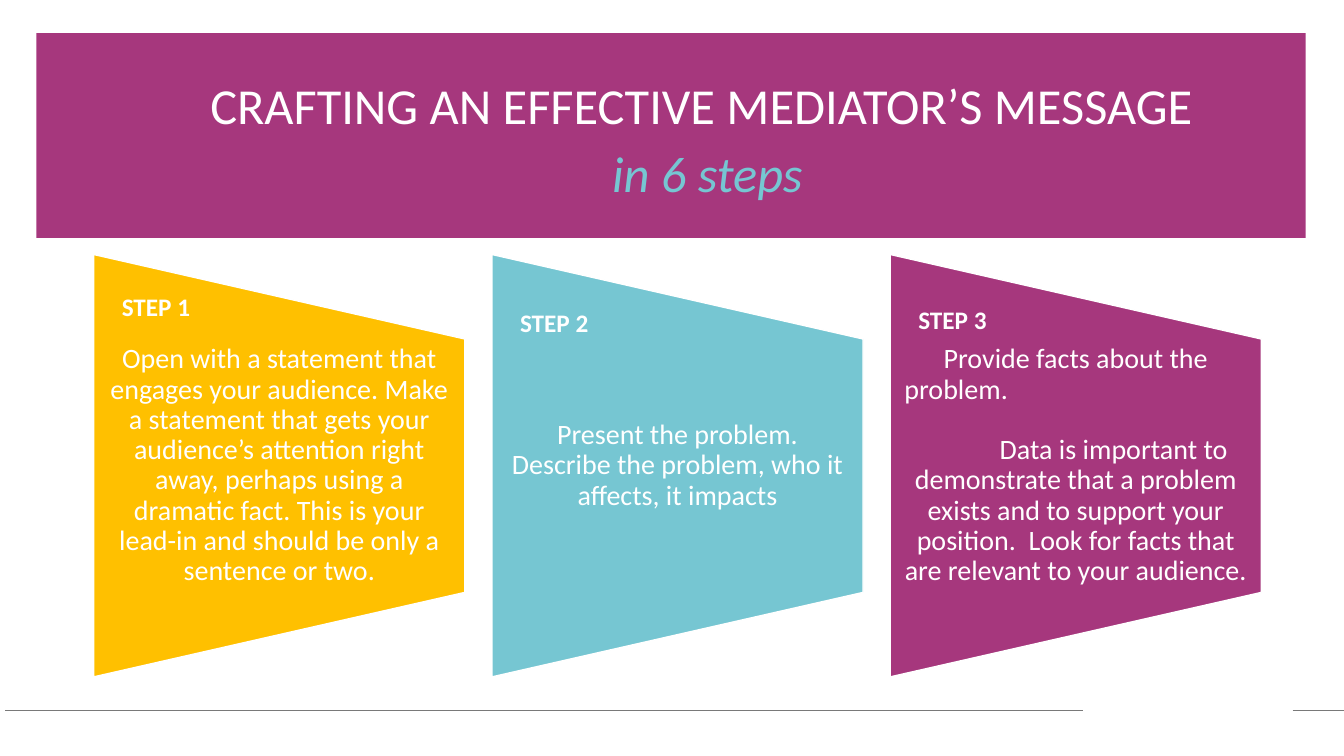
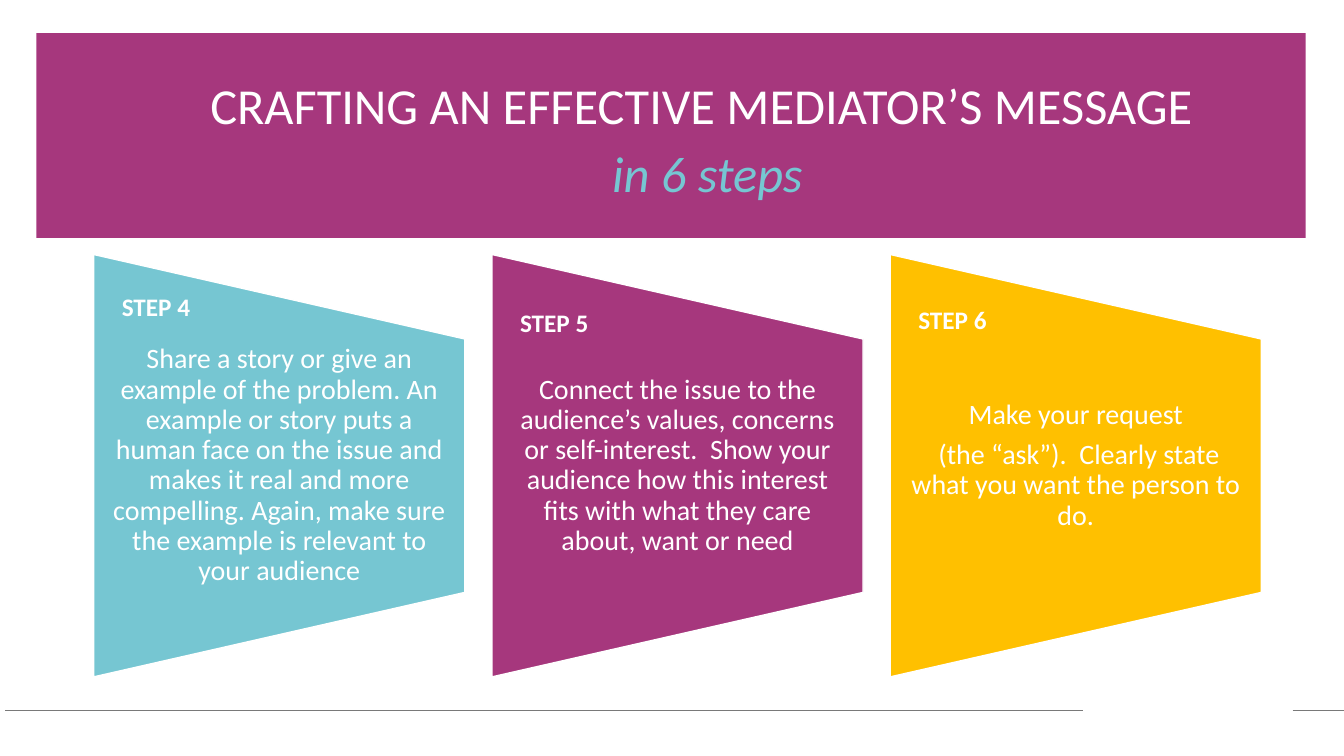
from pptx import Presentation
from pptx import util as u
from pptx.dml.color import RGBColor
from pptx.enum import shapes, text
from pptx.oxml.ns import qn
from lxml import etree

PX = 9144
FONT = "Calibri"
PLUM, TEAL, GOLD, WHITE, GREY = "A6377D", "76C6D2", "FFC000", "FFFFFF", "797979"
MID, LEFT = text.PP_ALIGN.CENTER, text.PP_ALIGN.LEFT

TITLE = [
    {"text": "CRAFTING AN EFFECTIVE MEDIATOR’S MESSAGE"},
    {"text": " in 6 steps", "tint": TEAL, "slant": True, "before": 10},
]
RULES = [(5, 1074), (1282, 1333)]
LABEL_TOPS = [284, 300, 297]

# Each slide holds three steps: fill and paragraphs
DECK = [
    [
        (GOLD, [{"text": "Open with a statement that engages your audience. Make a "
                 "statement that gets your audience’s attention right away, perhaps "
                 "using a dramatic fact. This is your lead-in and should be only a "
                 "sentence or two."}]),
        (TEAL, [{"text": "Present the problem. Describe the problem, who it affects, "
                 "it impacts"}]),
        (PLUM, [{"text": "Provide facts about the"},
                {"text": "problem.", "align": LEFT},
                {"text": "Data is important to demonstrate that a problem exists and "
                 "to support your position.  Look for facts that are relevant to "
                 "your audience.", "indent": 75, "before": 21.6}]),
    ],
    [
        (TEAL, [{"text": "Share a story or give an example of the problem. An example "
                 "or story puts a human face on the issue and makes it real and more "
                 "compelling. Again, make sure the example is relevant to your "
                 "audience"}]),
        (PLUM, [{"text": "Connect the issue to the audience’s values, concerns or "
                 "self-interest.  Show your audience how this interest fits with what "
                 "they care about, want or need"}]),
        (GOLD, [{"text": "Make your request"},
                {"text": " (the “ask”).  Clearly state what you want the person to do.",
                 "before": 7}]),
    ],
]


def px(*vals):
    return [u.Emu(round(v * PX)) for v in vals]


def rgb(code):
    return RGBColor.from_string(code)


def shape(slide, kind, box, fill, edge=None):
    item = slide.shapes.add_shape(kind, *px(*box))
    item.shadow.inherit = False
    item.fill.solid()
    item.fill.fore_color.rgb = rgb(fill)
    if edge:
        item.line.color.rgb = rgb(edge)
        item.line.width = u.Pt(1)
    else:
        item.line.fill.background()
    return item


def write(slide, box, paras, size, bold=False, align=MID, lead=0.9, wrap=True):
    """Add a text box and return its frame."""
    frame = slide.shapes.add_textbox(*px(*box)).text_frame
    frame.word_wrap = wrap
    for i, part in enumerate(paras):
        para = frame.paragraphs[0] if i == 0 else frame.add_paragraph()
        para.alignment = part.get("align", align)
        para.line_spacing = lead
        para.space_before = u.Pt(part.get("before", 0))
        if "indent" in part:
            para._p.get_or_add_pPr().set("indent", str(part["indent"] * PX))
        run = para.add_run()
        run.text = part["text"]
        font = run.font
        font.name, font.size, font.bold = FONT, u.Pt(size), bold
        font.italic = part.get("slant", False)
        font.color.rgb = rgb(part.get("tint", WHITE))
    return frame


def rule(slide, start, end):
    line = slide.shapes.add_connector(
        shapes.MSO_CONNECTOR.STRAIGHT, *px(start, 705, end, 705))
    line.line.color.rgb = rgb(GREY)
    line.line.width = u.Pt(0.5)
    etree.SubElement(line._element.spPr, qn("a:effectLst"))


def frame_slide(slide):
    """Draw the title band and footer rules that every slide shares."""
    shape(slide, shapes.MSO_SHAPE.RECTANGLE, (36, 33, 1259, 203), PLUM)
    for start, end in RULES:
        rule(slide, start, end)
    write(slide, (86, 75, 1220, 147), TITLE, 36)


def step(slide, col, num, fill, paras):
    left = 93 + col * 395
    wide, tall = 368, 419
    card = shape(slide, shapes.MSO_SHAPE.FLOWCHART_MANUAL_OPERATION,
                 (left - (tall - wide) / 2, 278, tall, wide), fill, WHITE)
    card.rotation = 270
    body = write(slide, (left, 336, wide, 252), paras, 20)
    body.vertical_anchor = text.MSO_ANCHOR.MIDDLE
    body.margin_left, body.margin_right = px(14, 14)
    body.margin_top = body.margin_bottom = 0
    write(slide, (left + 18, LABEL_TOPS[col], 89, 40), [{"text": f"STEP {num}"}],
          18, bold=True, align=LEFT, lead=1.0, wrap=False)


def main():
    deck = Presentation()
    deck.slide_width, deck.slide_height = px(1333, 750)
    num = 0
    for steps in DECK:
        slide = deck.slides.add_slide(deck.slide_layouts[6])
        frame_slide(slide)
        for col, (fill, paras) in enumerate(steps):
            num += 1
            step(slide, col, num, fill, paras)
    deck.save("out.pptx")


if __name__ == "__main__":
    main()
